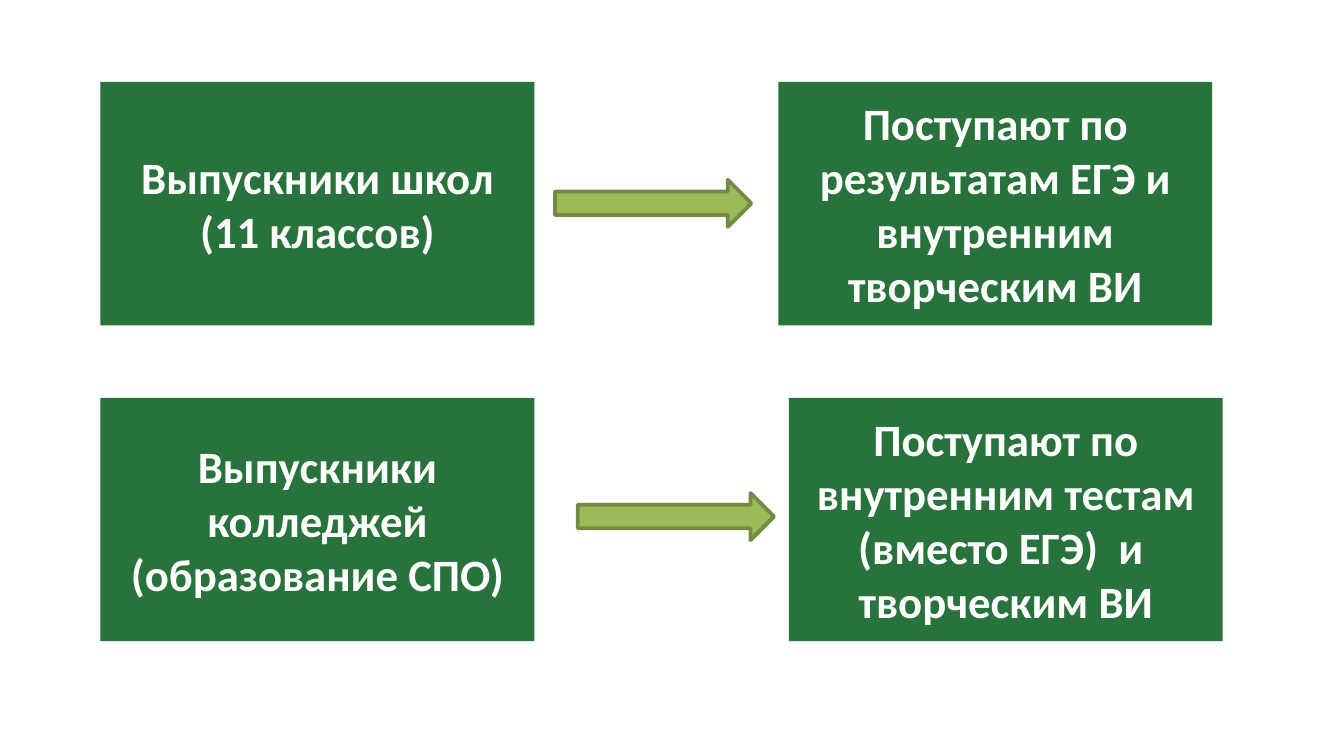
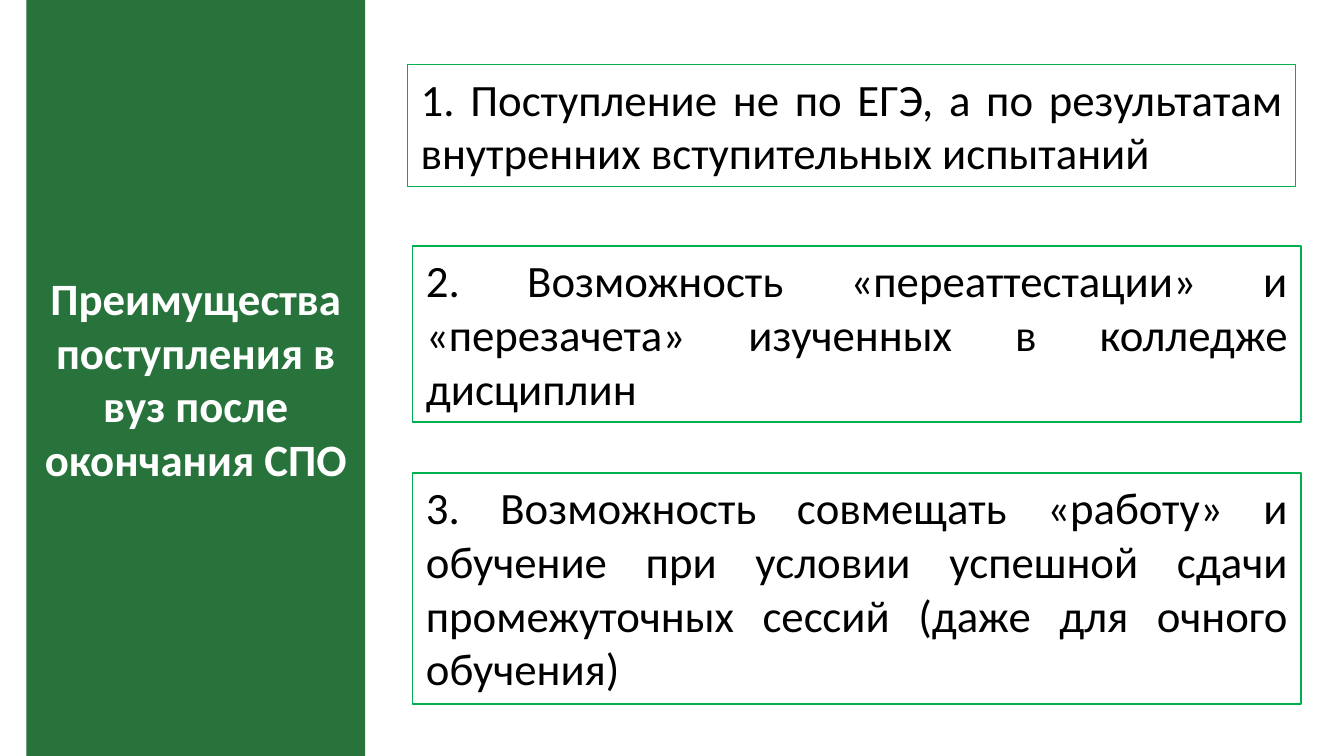
"""Build two slides on college and school graduates entering a university."""
from pptx import Presentation
from pptx.dml.color import RGBColor
from pptx.enum.shapes import MSO_SHAPE as SHAPE
from pptx.enum.text import MSO_ANCHOR as ANCHOR, MSO_AUTO_SIZE as FIT, PP_ALIGN as ALIGN
from pptx.util import Cm, Pt

COLORS = {
    "green": "27733B",
    "arrow": "9BBB59",
    "arrow_line": "738A42",
    "frame": "00B050",
    "white": "FFFFFF",
    "black": "000000",
}
FONT = {"name": "Calibri", "size": Pt(24)}
BLOCK_W, BLOCK_H = 8.2, 4.6
ARROW_W, ARROW_H = 3.71, 0.89
FRAME_W = 16.79
SLIDE_W, SLIDE_H = 25.4, 14.29

ROUTES = [
    (1.55, 10.49, 3.4, 14.71, "Выпускники школ (11 классов)",
     "Поступают по результатам ЕГЭ и внутренним творческим ВИ"),
    (7.52, 10.92, 9.32, 14.91, "Выпускники колледжей (образование СПО)",
     "Поступают по внутренним тестам (вместо ЕГЭ)  и  творческим ВИ"),
]
ADVANTAGES = [
    (7.7, 1.22, 2.31,
     "1. Поступление не по ЕГЭ, а по результатам внутренних вступительных испытаний"),
    (7.8, 4.65, 3.33,
     "2. Возможность «переаттестации» и «перезачета» изученных в колледже дисциплин"),
    (7.8, 8.94, 4.37,
     "3. Возможность совмещать «работу» и обучение при условии успешной сдачи "
     "промежуточных сессий (даже для очного обучения)"),
]


def rgb(name):
    return RGBColor.from_string(COLORS[name])


def set_attrs(obj, values):
    for key, value in values.items():
        setattr(obj, key, value)


def paint(sp, fill=None, line=None, width=0.75):
    if fill:
        sp.fill.solid()
        sp.fill.fore_color.rgb = rgb(fill)
    else:
        sp.fill.background()
    if line:
        sp.line.color.rgb = rgb(line)
        sp.line.width = Pt(width)
    else:
        sp.line.fill.background()


def add_shape(s, kind, left, top, width, height):
    sp = s.shapes.add_shape(kind, Cm(left), Cm(top), Cm(width), Cm(height))
    sp.shadow.inherit = False
    return sp


def write(sp, text, color, bold, align, anchor, fit=FIT.NONE):
    tf = sp.text_frame
    set_attrs(tf, {
        "word_wrap": True, "auto_size": fit, "vertical_anchor": anchor,
        "margin_left": Cm(0.25), "margin_right": Cm(0.25),
        "margin_top": Cm(0.13), "margin_bottom": Cm(0.13),
    })
    p = tf.paragraphs[0]
    p.alignment = align
    r = p.add_run()
    r.text = text
    set_attrs(r.font, {**FONT, "bold": bold})
    r.font.color.rgb = rgb(color)


def fill_block(sp, text):
    paint(sp, "green")
    write(sp, text, "white", True, ALIGN.CENTER, ANCHOR.MIDDLE)


def add_block(s, left, top, text):
    fill_block(add_shape(s, SHAPE.RECTANGLE, left, top, BLOCK_W, BLOCK_H), text)


def add_arrow(s, left, top):
    sp = add_shape(s, SHAPE.RIGHT_ARROW, left, top, ARROW_W, ARROW_H)
    paint(sp, "arrow", "arrow_line", 2)


def add_advantage(s, left, top, height, text):
    sp = add_shape(s, SHAPE.RECTANGLE, left, top, FRAME_W, height)
    paint(sp, line="frame")
    write(sp, text, "black", False, ALIGN.JUSTIFY, ANCHOR.TOP, FIT.SHAPE_TO_FIT_TEXT)


def add_side_title(s, text):
    sp = s.shapes.title
    set_attrs(sp, {"left": Cm(0.5), "top": Cm(0), "width": Cm(6.4), "height": Cm(SLIDE_H)})
    fill_block(sp, text)


def build_routes(prs):
    s = prs.slides.add_slide(prs.slide_layouts[6])
    for top, arrow_left, arrow_top, exam_left, graduates, exams in ROUTES:
        add_block(s, 1.9, top, graduates)
        add_arrow(s, arrow_left, arrow_top)
        add_block(s, exam_left, top, exams)


def build_advantages(prs):
    s = prs.slides.add_slide(prs.slide_layouts[5])
    add_side_title(s, "Преимущества поступления в вуз после окончания СПО")
    for advantage in ADVANTAGES:
        add_advantage(s, *advantage)


def main():
    prs = Presentation()
    set_attrs(prs, {"slide_width": Cm(SLIDE_W), "slide_height": Cm(SLIDE_H)})
    build_routes(prs)
    build_advantages(prs)
    prs.save("out.pptx")


if __name__ == "__main__":
    main()
